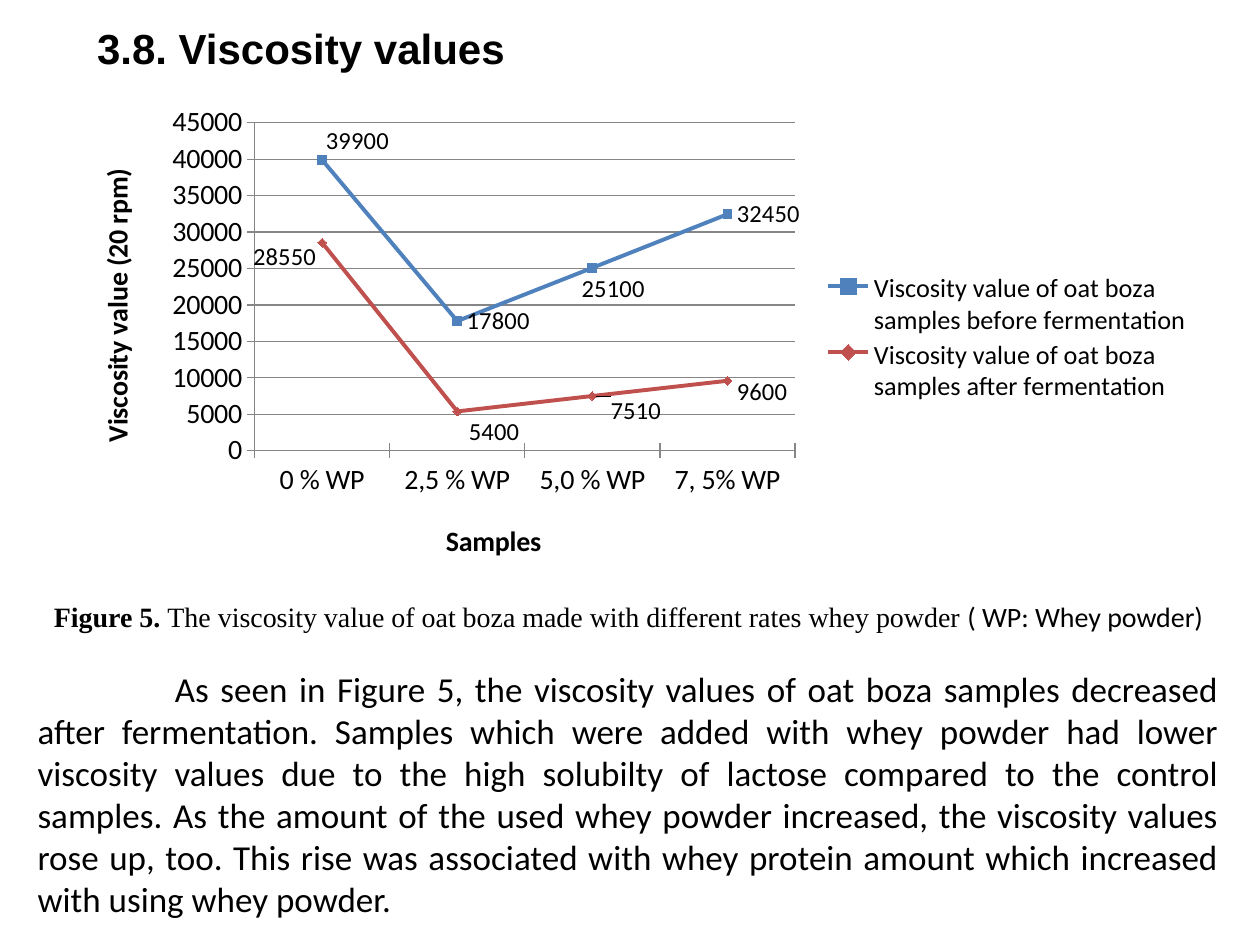
from dataclasses import dataclass

from lxml.etree import SubElement
from pptx import Presentation
from pptx.chart.data import CategoryChartData
from pptx.dml.color import RGBColor
from pptx.enum.chart import (XL_CHART_TYPE, XL_LABEL_POSITION, XL_LEGEND_POSITION,
                             XL_MARKER_STYLE, XL_TICK_MARK)
from pptx.enum.text import MSO_ANCHOR, MSO_AUTO_SIZE, PP_ALIGN
from pptx.oxml import parse_xml
from pptx.oxml.ns import nsdecls, qn
from pptx.util import Inches, Pt


@dataclass(frozen=True)
class Theme:
    ink: RGBColor = RGBColor(0, 0, 0)
    grid: RGBColor = RGBColor(0x86, 0x86, 0x86)
    before: RGBColor = RGBColor(0x4F, 0x81, 0xBD)
    after: RGBColor = RGBColor(0xC0, 0x50, 0x4D)
    heading_face: str = "Arial"
    body_face: str = "Calibri"
    caption_face: str = "Times New Roman"
    heading: int = 24
    body: int = 20
    caption: int = 16
    axis: int = 16
    legend: int = 15
    value: int = 14


@dataclass
class Measure:
    name: str
    values: tuple
    color: RGBColor
    marker: XL_MARKER_STYLE
    label_shifts: dict


def place(element, index, **fractions):
    for existing in element.findall(qn("c:layout")):
        element.remove(existing)
    layout = parse_xml(f"<c:layout {nsdecls('c')}><c:manualLayout/></c:layout>")
    for tag, value in fractions.items():
        SubElement(layout[0], qn(f"c:{tag}"), val=str(value))
    element.insert(index, layout)


class SlideWriter:
    def __init__(self, slide, theme):
        self.slide = slide
        self.theme = theme

    def style(self, font, size, face=None, bold=False):
        font.size = Pt(size)
        font.name = face or self.theme.body_face
        font.bold = bold
        font.color.rgb = self.theme.ink

    def title(self, text, left, top, width, height):
        heading = self.slide.shapes.title
        heading.left, heading.top = Inches(left), Inches(top)
        heading.width, heading.height = Inches(width), Inches(height)
        frame = heading.text_frame
        frame.text = text
        frame.vertical_anchor = MSO_ANCHOR.TOP
        frame.auto_size = MSO_AUTO_SIZE.NONE
        paragraph = frame.paragraphs[0]
        paragraph.alignment = PP_ALIGN.LEFT
        self.style(paragraph.font, self.theme.heading, self.theme.heading_face, True)

    def text_box(self, left, top, width, height):
        box = self.slide.shapes.add_textbox(
            Inches(left), Inches(top), Inches(width), Inches(height))
        box.text_frame.word_wrap = True
        paragraph = box.text_frame.paragraphs[0]
        paragraph.alignment = PP_ALIGN.JUSTIFY
        return paragraph

    def caption(self, parts, *bounds):
        paragraph = self.text_box(*bounds)
        for text, face, bold in parts:
            run = paragraph.add_run()
            run.text = text
            self.style(run.font, self.theme.caption, face, bold)

    def body(self, text, indent, *bounds):
        paragraph = self.text_box(*bounds)
        paragraph.text = text
        paragraph._p.get_or_add_pPr().set("indent", str(Inches(indent)))
        self.style(paragraph.font, self.theme.body)

    def axis(self, axis, title, x, y):
        axis.axis_title.text_frame.text = title
        heading = axis.axis_title.text_frame.paragraphs[0]
        self.style(heading.font, self.theme.axis, bold=True)
        place(axis.axis_title._element, 1, xMode="edge", yMode="edge", x=x, y=y)
        axis.major_tick_mark = XL_TICK_MARK.CROSS
        axis.minor_tick_mark = XL_TICK_MARK.NONE
        axis.format.line.color.rgb = self.theme.grid
        self.style(axis.tick_labels.font, self.theme.axis)

    def series(self, series, measure):
        series.smooth = False
        series.format.line.color.rgb = measure.color
        series.format.line.width = Pt(2.25)
        series.marker.style = measure.marker
        series.marker.size = 5
        series.marker.format.fill.solid()
        series.marker.format.fill.fore_color.rgb = measure.color
        series.marker.format.line.color.rgb = measure.color
        labels = series.data_labels
        labels.show_value = True
        labels.position = XL_LABEL_POSITION.RIGHT
        self.style(labels.font, self.theme.value)
        for index, (x, y) in measure.label_shifts.items():
            label = series.points[index].data_label
            self.style(label.font, self.theme.value)
            label.position = XL_LABEL_POSITION.RIGHT
            place(labels._element.find(f"{qn('c:dLbl')}[{index_of(labels, index)}]"), 1, x=x, y=y)

    def line_chart(self, categories, measures, left, top, width, height):
        data = CategoryChartData()
        data.categories = categories
        for measure in measures:
            data.add_series(measure.name, measure.values)
        chart = self.slide.shapes.add_chart(
            XL_CHART_TYPE.LINE_MARKERS, Inches(left), Inches(top),
            Inches(width), Inches(height), data).chart
        self.style(chart.font, 10)
        chart.has_title = False
        plot = chart.plots[0]
        plot.vary_by_categories = False
        for series, measure in zip(plot.series, measures):
            self.series(series, measure)
        self.axis(chart.category_axis, "Samples", 0.32, 0.87)
        values = chart.value_axis
        self.axis(values, "Viscosity value (20 rpm)", 0.01, 0.14)
        values.minimum_scale, values.maximum_scale, values.major_unit = 0, 45000, 5000
        values.has_major_gridlines = True
        values.major_gridlines.format.line.color.rgb = self.theme.grid
        chart.has_legend = True
        chart.legend.position = XL_LEGEND_POSITION.RIGHT
        chart.legend.include_in_layout = False
        self.style(chart.legend.font, self.theme.legend)
        place(chart.legend._element, 1, xMode="edge", yMode="edge",
              x=0.66, y=0.36, w=0.33, h=0.28)
        place(plot._element.getparent(), 0, layoutTarget="inner", xMode="edge",
              yMode="edge", x=0.154, y=0.056, w=0.482, h=0.678)


def index_of(labels, point):
    points = [int(label.find(qn("c:idx")).get("val"))
              for label in labels._element.findall(qn("c:dLbl"))]
    return points.index(point) + 1


def main():
    theme = Theme()
    deck = Presentation()
    deck.slide_width, deck.slide_height = Inches(10), Inches(7.5)
    writer = SlideWriter(deck.slides.add_slide(deck.slide_layouts[5]), theme)
    writer.caption([
        ("Figure 5. ", theme.caption_face, True),
        ("The viscosity value of oat boza made with different rates whey powder ",
         theme.caption_face, False),
        ("( WP: Whey powder)", theme.body_face, False),
    ], 0.33, 4.71, 9.45, 0.37)
    writer.line_chart(["0 % WP", "2,5 % WP", "5,0 % WP", "7, 5% WP"], [
        Measure("Viscosity value of oat boza samples before fermentation",
                (39900, 17800, 25100, 32450), theme.before, XL_MARKER_STYLE.SQUARE,
                {0: (-0.005, -0.04), 2: (-0.018, 0.043)}),
        Measure("Viscosity value of oat boza samples after fermentation",
                (28550, 5400, 7510, 9600), theme.after, XL_MARKER_STYLE.DIAMOND,
                {0: (-0.07, 0.03), 1: (0.002, 0.043), 2: (0.008, 0.03), 3: (0, 0.023)}),
    ], 0.65, 0.76, 8.9, 3.84)
    writer.body(
        "As seen in Figure 5, the viscosity values of oat boza samples decreased after "
        "fermentation. Samples which were added with whey powder had lower viscosity values "
        "due to the high solubilty of lactose compared to the control samples. As the amount "
        "of the used whey powder increased, the viscosity values rose up, too. This rise was "
        "associated with whey protein amount which increased with using whey powder.",
        1.09, 0.2, 5.25, 9.57, 2.12)
    writer.title("3.8. Viscosity values", 0.67, 0.13, 3.78, 0.5)
    deck.save("out.pptx")


if __name__ == "__main__":
    main()
